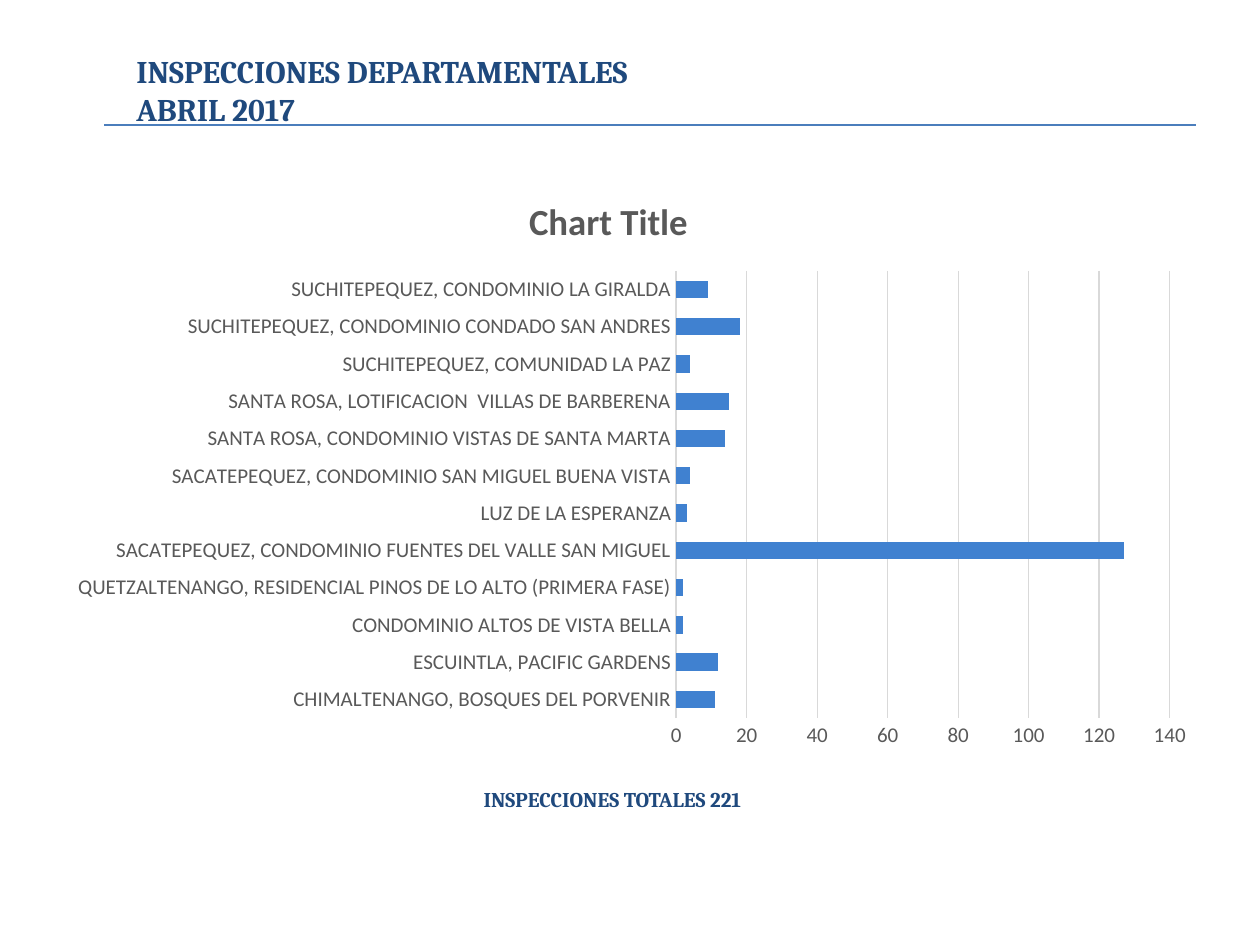
from lxml import etree
from pptx import Presentation
from pptx.chart.data import CategoryChartData
from pptx.dml.color import RGBColor
from pptx.enum.chart import XL_CHART_TYPE, XL_TICK_MARK
from pptx.enum.shapes import MSO_CONNECTOR
from pptx.oxml import parse_xml
from pptx.oxml.ns import nsdecls, qn
from pptx.util import Pt

BAR = XL_CHART_TYPE.BAR_CLUSTERED
NO_TICK = XL_TICK_MARK.NONE
STRAIGHT = MSO_CONNECTOR.STRAIGHT

COLORS = {"navy": "1F497D", "rule": "4B7EBC", "bar": "4081D0",
          "label": "595959", "grid": "D9D9D9"}

# Content
HEADING = ["INSPECCIONES DEPARTAMENTALES", "ABRIL 2017"]
TOTAL = ["INSPECCIONES TOTALES 221"]
CHART_TITLE = "Chart Title"
INSPECTIONS = [
    ("CHIMALTENANGO, BOSQUES DEL PORVENIR", 11),
    ("ESCUINTLA, PACIFIC GARDENS", 12),
    ("CONDOMINIO ALTOS DE VISTA BELLA", 2),
    ("QUETZALTENANGO, RESIDENCIAL PINOS DE LO ALTO (PRIMERA FASE)", 2),
    ("SACATEPEQUEZ, CONDOMINIO FUENTES DEL VALLE SAN MIGUEL", 127),
    ("LUZ DE LA ESPERANZA", 3),
    ("SACATEPEQUEZ, CONDOMINIO SAN MIGUEL BUENA VISTA", 4),
    ("SANTA ROSA, CONDOMINIO VISTAS DE SANTA MARTA", 14),
    ("SANTA ROSA, LOTIFICACION  VILLAS DE BARBERENA", 15),
    ("SUCHITEPEQUEZ, COMUNIDAD LA PAZ", 4),
    ("SUCHITEPEQUEZ, CONDOMINIO CONDADO SAN ANDRES", 18),
    ("SUCHITEPEQUEZ, CONDOMINIO LA GIRALDA", 9),
]
SERIES_COUNT = 12  # only the last one holds counts

# Formats and places, in points
HEADING_FONT = {"name": "Cambria", "size": Pt(18), "bold": True}
TOTAL_FONT = {"name": "Cambria", "size": Pt(12), "bold": True}
AXIS_FONT = {"name": "Calibri", "size": Pt(12), "bold": False}
TITLE_FONT = {"name": "Calibri", "size": Pt(21), "bold": True}
HEADING_BOX = (70.8, 26.2, 461.5, 72.5)
TOTAL_BOX = (269.3, 445.9, 172, 21.5)
CHART_BOX = (31, 98.5, 659.5, 335.5)
RULE_LEFT, RULE_RIGHT, RULE_Y = 59.5, 683.5, 71.5
# Measured from the corner of the chart
PLOT_PLACE = {"x": 355.4, "y": 56.3, "w": 282, "h": 255.6}
TITLE_PLACE = {"x": 267.5, "y": 9.5}


def rgb(name):
    return RGBColor.from_string(COLORS[name])


def set_font(font, values, color):
    for key, value in values.items():
        setattr(font, key, value)
    font.color.rgb = rgb(color)


def set_line(line, color, width):
    line.color.rgb = rgb(color)
    line.width = Pt(width)


def add_text(slide, box, lines, font, wrap):
    frame = slide.shapes.add_textbox(*map(Pt, box)).text_frame
    frame.word_wrap = wrap
    for i, line in enumerate(lines):
        paragraph = frame.add_paragraph() if i else frame.paragraphs[0]
        run = paragraph.add_run()
        run.text = line
        set_font(run.font, font, "navy")


def place(part, lengths, inner=False):
    """Give the chart title or plot area a fixed layout."""
    width, height = CHART_BOX[2:]
    whole = {"x": width, "w": width, "y": height, "h": height}
    marks = '<c:layoutTarget val="inner"/>' if inner else ""
    marks += "".join(f'<c:{key}Mode val="edge"/>' for key in "xy")
    marks += "".join(f'<c:{key} val="{value / whole[key]:.4f}"/>'
                     for key, value in lengths.items())
    for old in part.findall(qn("c:layout")):
        part.remove(old)
    layout = parse_xml(f'<c:layout {nsdecls("c")}><c:manualLayout>{marks}'
                       '</c:manualLayout></c:layout>')
    text = part.find(qn("c:tx"))
    if text is None:
        part.insert(0, layout)
    else:
        text.addnext(layout)


def add_inspections(slide):
    data = CategoryChartData()
    data.categories = [name for name, _ in INSPECTIONS]
    for number in range(1, SERIES_COUNT + 1):
        counted = number == SERIES_COUNT
        data.add_series(f"Series {number}",
                        [count for _, count in INSPECTIONS] if counted else [])
    chart = slide.shapes.add_chart(BAR, *map(Pt, CHART_BOX), data).chart
    set_font(chart.font, AXIS_FONT, "label")
    chart.has_legend = False

    # Title
    run = chart.chart_title.text_frame.paragraphs[0].add_run()
    run.text = CHART_TITLE
    set_font(run.font, TITLE_FONT, "label")
    chart.chart_title.include_in_layout = False

    # Bars: a series without values must take no room
    plot = chart.plots[0]
    for key, value in {"gap_width": 115, "overlap": -20,
                       "vary_by_categories": False}.items():
        setattr(plot, key, value)
    *empty, bars = plot.series
    for series in empty:
        series._element.remove(series._element.find(qn("c:val")))
    bars.invert_if_negative = False
    bars.format.fill.solid()
    bars.format.fill.fore_color.rgb = rgb("bar")

    # Axes
    places, counts = chart.category_axis, chart.value_axis
    for axis in (places, counts):
        axis.major_tick_mark = axis.minor_tick_mark = NO_TICK
        set_font(axis.tick_labels.font, AXIS_FONT, "label")
    places.has_major_gridlines = False
    set_line(places.format.line, "grid", 1)
    counts.format.line.fill.background()
    set_line(counts.major_gridlines.format.line, "grid", 0.75)
    for key, value in {"minimum_scale": 0, "maximum_scale": 140,
                       "major_unit": 20}.items():
        setattr(counts, key, value)

    place(places._element.getparent(), PLOT_PLACE, inner=True)
    place(chart.chart_title._element, TITLE_PLACE)


def main():
    deck = Presentation()
    deck.slide_width, deck.slide_height = Pt(720), Pt(540)
    slide = deck.slides.add_slide(deck.slide_layouts[6])

    # Heading and rule
    add_text(slide, HEADING_BOX, HEADING, HEADING_FONT, True)
    rule = slide.shapes.add_connector(
        STRAIGHT, *map(Pt, (RULE_LEFT, RULE_Y, RULE_RIGHT, RULE_Y)))
    set_line(rule.line, "rule", 0.75)
    etree.SubElement(rule._element.spPr, qn("a:effectLst"))

    # Total and chart
    add_text(slide, TOTAL_BOX, TOTAL, TOTAL_FONT, False)
    add_inspections(slide)
    deck.save("out.pptx")


if __name__ == "__main__":
    main()
